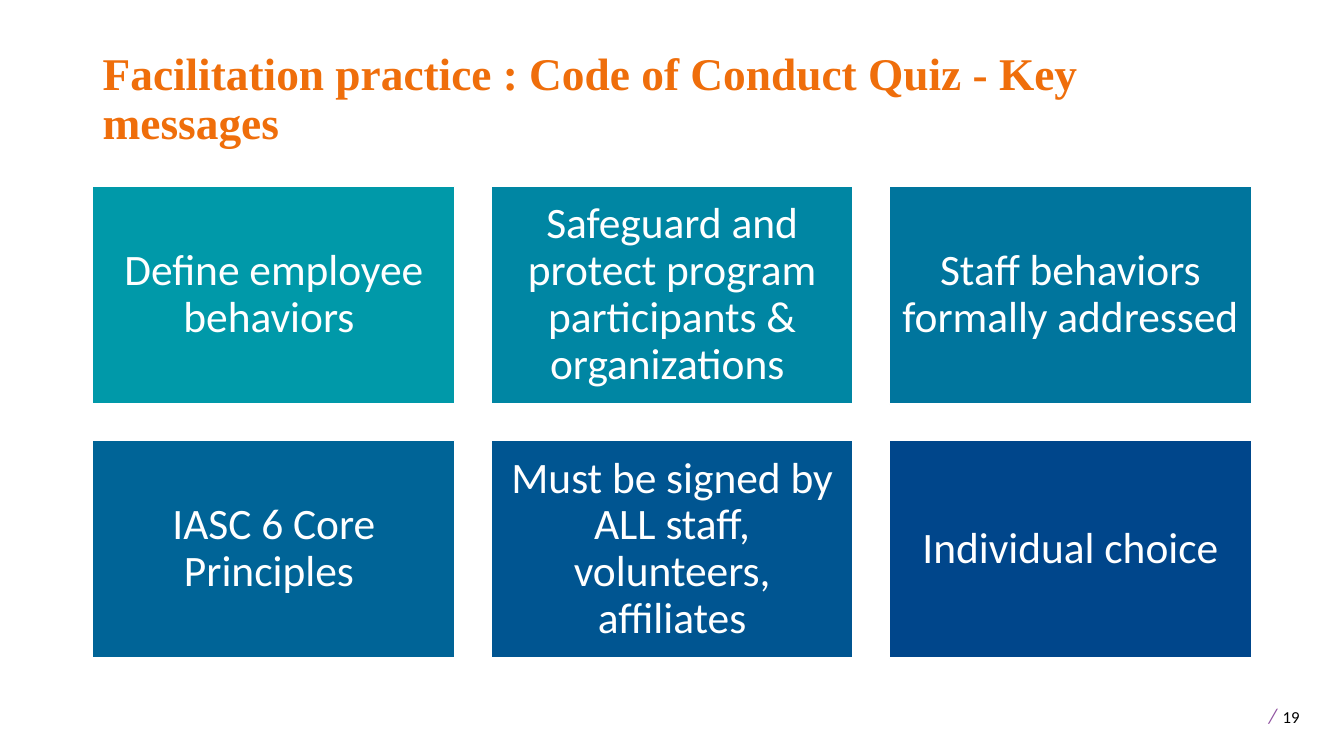
from pptx import Presentation
from pptx.dml.color import RGBColor
from pptx.enum.shapes import MSO_SHAPE as Shape
from pptx.enum.text import MSO_ANCHOR as Anchor, PP_ALIGN as Align
from pptx.util import Inches, Pt

# Content
TITLE = "Facilitation practice : Code of Conduct Quiz - Key messages"
MESSAGES = [
    ("Define employee behaviors ", "0099A9"),
    ("Safeguard and protect program participants & organizations ", "0086A3"),
    ("Staff behaviors formally addressed ", "00759D"),
    ("IASC 6 Core Principles ", "006497"),
    ("Must be signed by ALL staff, volunteers, affiliates", "005591"),
    ("Individual choice", "00468B"),
]
PAGE_NUMBER = [  # text, size, colour, italic
    (" ", 18, "000000", False),
    ("/", 15, "9053A1", True),
    (" ", 18, "000000", False),
    ("19", 12, "000000", False),
]

# Grid of message cards, in inches
COLUMNS = 3
LEFT, TOP = 0.92, 1.85
CARD_WIDTH, CARD_HEIGHT = 3.59, 2.16
GAP = 0.36
CARD_MARGIN = 0.13


def color(value):
    return RGBColor.from_string(value)


def format_font(font, name, size, value, bold=False, italic=False):
    font.name = name
    font.size = Pt(size)
    font.color.rgb = color(value)
    font.bold = bold
    font.italic = italic


def add_text_box(slide, left, top, width, height, anchor):
    box = slide.shapes.add_textbox(Inches(left), Inches(top), Inches(width), Inches(height))
    frame = box.text_frame
    frame.word_wrap = True
    frame.vertical_anchor = anchor
    return frame


def add_card(slide, left, top, text, fill):
    card = slide.shapes.add_shape(Shape.RECTANGLE, Inches(left), Inches(top),
                                  Inches(CARD_WIDTH), Inches(CARD_HEIGHT))
    card.shadow.inherit = False
    card.fill.solid()
    card.fill.fore_color.rgb = color(fill)
    card.line.color.rgb = color("FFFFFF")
    card.line.width = Pt(1)
    frame = card.text_frame
    frame.word_wrap = True
    frame.vertical_anchor = Anchor.MIDDLE
    frame.margin_left = frame.margin_right = Inches(CARD_MARGIN)
    frame.margin_top = frame.margin_bottom = Inches(CARD_MARGIN)
    frame.text = text
    paragraph = frame.paragraphs[0]
    paragraph.alignment = Align.CENTER
    paragraph.line_spacing = 0.9
    format_font(paragraph.runs[0].font, "Calibri", 31, "FFFFFF")


presentation = Presentation()
presentation.slide_width = Inches(13.33)
presentation.slide_height = Inches(7.5)
slide = presentation.slides.add_slide(presentation.slide_layouts[6])

# Title
title = add_text_box(slide, LEFT, 0.4, 11.5, 1.13, Anchor.BOTTOM)
title.text = TITLE
title.paragraphs[0].line_spacing = 0.9
format_font(title.paragraphs[0].runs[0].font, "Times New Roman", 32.4, "EF6E0B", bold=True)

# Message cards
for index, (text, fill) in enumerate(MESSAGES):
    row, column = divmod(index, COLUMNS)
    add_card(slide, LEFT + column * (CARD_WIDTH + GAP), TOP + row * (CARD_HEIGHT + GAP), text, fill)

# Page number
page_number = add_text_box(slide, 12.43, 6.88, 0.87, 0.4, Anchor.TOP)
for text, size, value, italic in PAGE_NUMBER:
    run = page_number.paragraphs[0].add_run()
    run.text = text
    format_font(run.font, "Calibri", size, value, italic=italic)

presentation.save("out.pptx")
